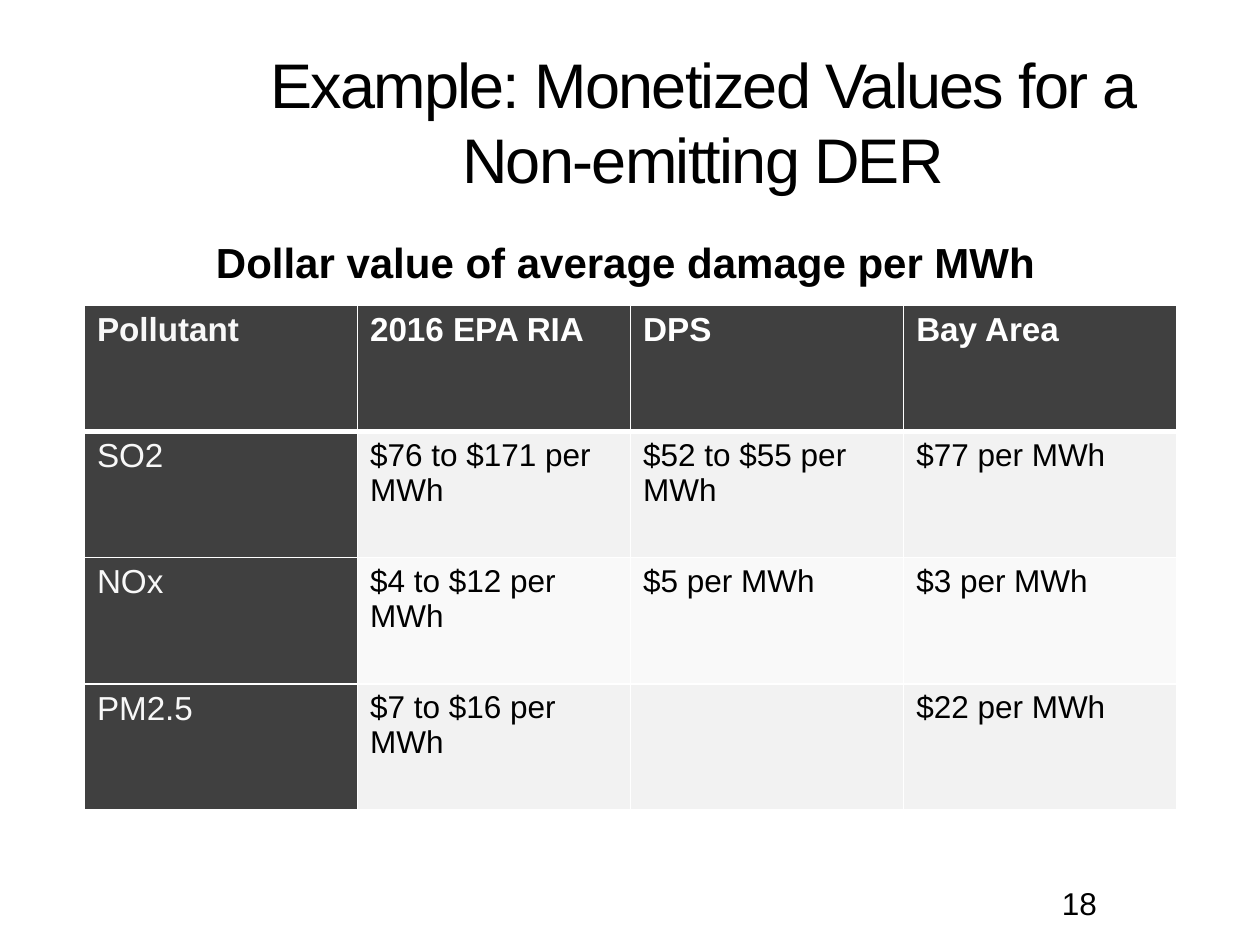
from lxml import etree
from pptx import Presentation
from pptx import util as u
from pptx.dml.color import RGBColor
from pptx.enum import text
from pptx.oxml import ns

WHITE, OFF_WHITE, BLACK, DARK = "FFFFFF", "F8F8F8", "000000", "404040"
BANDS = ["F2F2F2", "F9F9F9"]


def style(p, size, color, bold=False):
    for r in p.runs:
        r.font.name = "Arial"
        r.font.size = u.Pt(size)
        r.font.bold = bold
        r.font.color.rgb = RGBColor.from_string(color)


def border(cell, side, width):
    ln = etree.SubElement(cell._tc.get_or_add_tcPr(), ns.qn("a:ln" + side), w=str(u.Pt(width)))
    fill = etree.SubElement(ln, ns.qn("a:solidFill"))
    etree.SubElement(fill, ns.qn("a:srgbClr"), val=WHITE)


prs = Presentation()
prs.slide_width, prs.slide_height = u.Inches(10), u.Inches(7.5)
s = prs.slides.add_slide(prs.slide_layouts[5])

# Title
title = s.shapes.title
title.left, title.top = u.Inches(1.58), u.Inches(0.42)
title.width, title.height = u.Inches(8), u.Inches(1.08)
tf = title.text_frame
tf.text = "Example: Monetized Values for a Non-emitting DER"
tf.word_wrap = True
tf.auto_size = text.MSO_AUTO_SIZE.NONE
tf.vertical_anchor = text.MSO_ANCHOR.MIDDLE
p = tf.paragraphs[0]
p.alignment = text.PP_ALIGN.CENTER
style(p, 36, BLACK)
p.runs[0].font._element.set("spc", "-100")

# Page number and table heading
labels = [
    ("18", 8.33, 6.97, 1.17, 0.36, 18, False, text.PP_ALIGN.LEFT),
    ("Dollar value of average damage per MWh", 1.58, 1.83, 6.77, 0.5, 24, True,
     text.PP_ALIGN.CENTER),
]
for words, x, y, w, h, size, bold, align in labels:
    tf = s.shapes.add_textbox(*map(u.Inches, (x, y, w, h))).text_frame
    tf.text = words
    tf.word_wrap = not bold
    p = tf.paragraphs[0]
    p.alignment = align
    style(p, size, BLACK, bold)

# Damage values
rows = [
    ["Pollutant", "2016 EPA RIA", "DPS", "Bay Area"],
    ["SO2", "$76 to $171 per MWh", "$52 to $55 per MWh", "$77 per MWh"],
    ["NOx", "$4 to $12 per MWh", "$5 per MWh", "$3 per MWh"],
    ["PM2.5", "$7 to $16 per MWh", "", "$22 per MWh"],
]
table = s.shapes.add_table(
    len(rows), len(rows[0]), *map(u.Inches, (0.67, 2.42, 8.67, 4.01))).table
for i, row in enumerate(rows):
    for j, words in enumerate(row):
        cell = table.cell(i, j)
        header, label = i == 0, j == 0
        for side in "LRTB":
            heavy = (i, side) in [(0, "B"), (1, "T")]
            border(cell, side, 3 if heavy else 1)
        cell.fill.solid()
        cell.fill.fore_color.rgb = RGBColor.from_string(
            DARK if header or label else BANDS[(i - 1) % 2])
        cell.text_frame.text = words
        color = OFF_WHITE if label else WHITE if header else BLACK
        style(cell.text_frame.paragraphs[0], 19 if header or label else 18, color, header)

prs.save("out.pptx")
